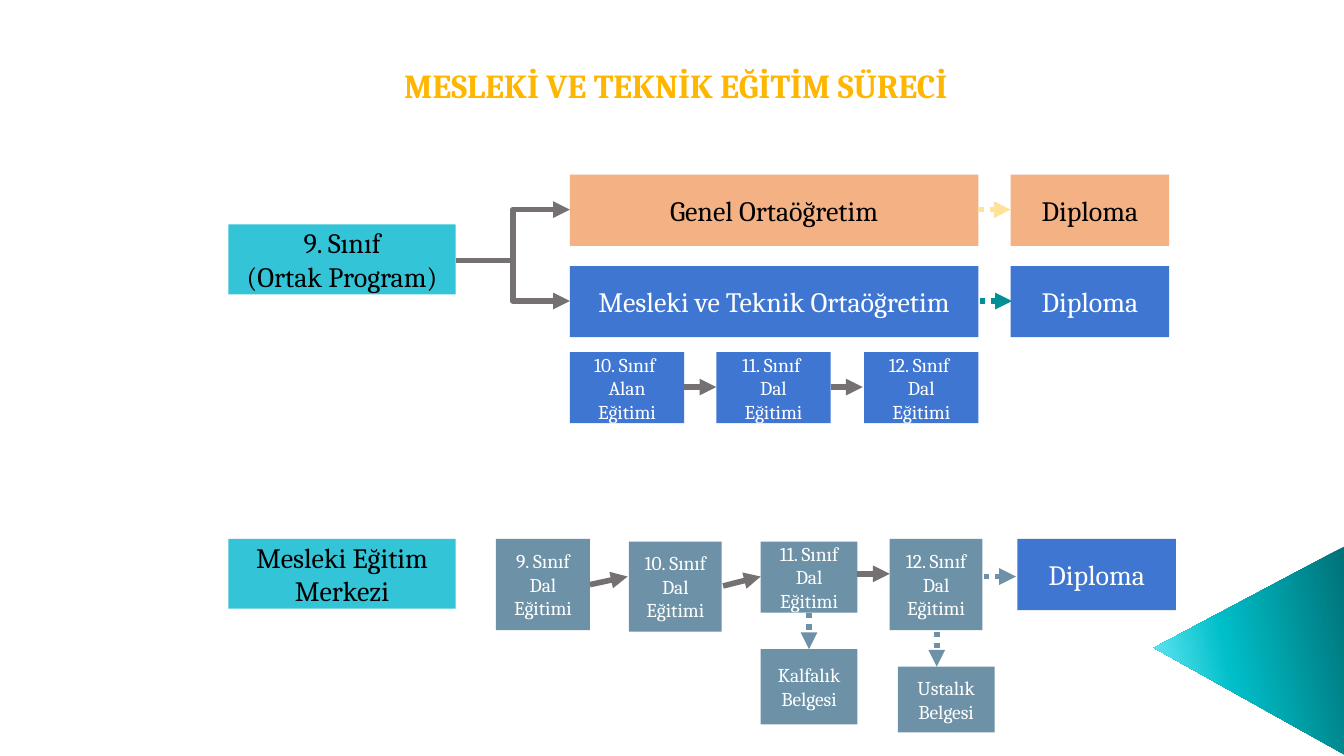
from copy import deepcopy

from pptx import Presentation
from pptx.dml.color import RGBColor
from pptx.enum.dml import MSO_LINE
from pptx.enum.shapes import MSO_CONNECTOR, MSO_SHAPE
from pptx.enum.text import MSO_ANCHOR, PP_ALIGN
from pptx.oxml.ns import qn
from pptx.util import Pt
from lxml import etree

RECT = MSO_SHAPE.RECTANGLE
TRI = MSO_SHAPE.ISOSCELES_TRIANGLE
LINE = MSO_CONNECTOR.STRAIGHT
ELBOW = MSO_CONNECTOR.ELBOW
DOTS = MSO_LINE.ROUND_DOT  # written as sysDot
MIDDLE = MSO_ANCHOR.MIDDLE
CENTER = PP_ALIGN.CENTER

PX = 9144  # 100 px to the inch
WIDE = 1000
FONT = "Cambria"
BIG, SMALL = 15, 10.5

BLACK = RGBColor(0x00, 0x00, 0x00)
WHITE = RGBColor(0xFF, 0xFF, 0xFF)
GOLD = RGBColor(0xFF, 0xB6, 0x00)
SAND = RGBColor(0xFF, 0xE2, 0x99)
PEACH = RGBColor(0xF4, 0xB1, 0x83)
BLUE = RGBColor(0x3E, 0x76, 0xD2)
CYAN = RGBColor(0x34, 0xC4, 0xD8)
STEEL = RGBColor(0x6D, 0x91, 0xA6)
GRAY = RGBColor(0x76, 0x71, 0x71)
TEAL = RGBColor(0x01, 0x8E, 0x95)
FADE = [
    (0, RGBColor(0x00, 0x71, 0x77)),
    (0.6, RGBColor(0x00, 0xBF, 0xC9)),
    (1, RGBColor(0x76, 0xEF, 0xFB)),
]


def emu(*sizes):
    return [size * PX for size in sizes]


def write(shape, text, size, color, bold=False):
    frame = shape.text_frame
    frame.word_wrap = True
    frame.vertical_anchor = MIDDLE
    frame.text = text
    for para in frame.paragraphs:
        para.alignment = CENTER
        para.font.name = FONT
        para.font.size = Pt(size)
        para.font.bold = bold
        para.font.color.rgb = color
    return frame


def add_box(slide, place, text, fill, size=BIG, color=WHITE):
    box = slide.shapes.add_shape(RECT, *emu(*place))
    box.shadow.inherit = False
    box.fill.solid()
    box.fill.fore_color.rgb = fill
    box.line.fill.background()
    write(box, text, size, color)


def add_arrow(slide, ends, color=GRAY, kind=LINE, dash=None):
    arrow = slide.shapes.add_connector(kind, *emu(*ends))
    arrow.line.color.rgb = color
    arrow.line.width = Pt(3)
    if dash:
        arrow.line.dash_style = dash
    props = arrow._element.spPr
    etree.SubElement(props.find(qn("a:ln")), qn("a:tailEnd"), type="triangle")
    etree.SubElement(props, qn("a:effectLst"))


def add_corner(slide):
    tri = slide.shapes.add_shape(TRI, *emu(852, 413, 155, 142))
    tri.adjustments[0] = 0.513
    tri.rotation = 270
    tri.shadow.inherit = False
    tri.line.fill.background()
    tri.fill.gradient()
    tri.fill.gradient_angle = 102
    stops = tri._element.spPr.find(".//" + qn("a:gsLst"))
    stops.append(deepcopy(stops[0]))
    for stop, (spot, color) in zip(tri.fill.gradient_stops, FADE):
        stop.position = spot
        stop.color.rgb = color


def add_title(slide):
    title = slide.shapes.add_textbox(*emu(207, 29, 592, 72))
    frame = write(title, "MESLEKİ VE TEKNİK EĞİTİM SÜRECİ", 18, GOLD, True)
    frame.paragraphs[0].line_spacing = 0.9


def add_school(slide):
    # Shared first year, forking into two tracks
    add_box(slide, (170, 167, 169, 52), "9. Sınıf\n(Ortak Program)", CYAN, color=BLACK)
    tracks = [
        (130, "Genel Ortaöğretim", PEACH, BLACK, SAND, 728),
        (198, "Mesleki ve Teknik Ortaöğretim", BLUE, WHITE, TEAL, 729),
    ]
    for top, text, fill, color, tint, left in tracks:
        mid = top + 26
        add_box(slide, (424, top, 304, 53), text, fill, color=color)
        add_box(slide, (752, top, 118, 53), "Diploma", fill, color=color)
        add_arrow(slide, (339, 194, 424, mid), kind=ELBOW)
        add_arrow(slide, (left, mid, left + 24, mid), tint, dash=DOTS)

    # Years of the vocational track
    years = [(424, "10. Sınıf \nAlan"), (533, "11. Sınıf \nDal"), (643, "12. Sınıf \nDal")]
    for left, text in years:
        add_box(slide, (left, 262, 85, 53), text + " Eğitimi", BLUE, SMALL)
    for left, _ in years[:-1]:
        add_arrow(slide, (left + 85, 288, left + 109, 288))


def add_center(slide):
    add_box(slide, (170, 401, 169, 52), "Mesleki Eğitim Merkezi", CYAN, color=BLACK)

    # Four years of training
    years = [(369, 401, 70, 68), (468, 403, 69, 67), (566, 403, 72, 53), (662, 401, 69, 68)]
    for grade, place in enumerate(years, 9):
        add_box(slide, place, f"{grade}. Sınıf\nDal Eğitimi", STEEL, SMALL)
    for ends in [(439, 435, 467, 429), (538, 436, 566, 429), (638, 427, 662, 427)]:
        add_arrow(slide, ends)

    # Certificates and diploma
    add_box(slide, (566, 483, 72, 56), "Kalfalık Belgesi", STEEL, SMALL)
    add_box(slide, (668, 496, 72, 49), "Ustalık Belgesi", STEEL, SMALL)
    add_box(slide, (757, 401, 118, 53), "Diploma", BLUE)
    for ends in [(602, 456, 602, 483), (697, 470, 697, 496), (732, 429, 756, 429)]:
        add_arrow(slide, ends, STEEL, dash=DOTS)


def main():
    # Widescreen page, 16:9
    deck = Presentation()
    deck.slide_width = WIDE * PX
    deck.slide_height = WIDE * PX * 9 // 16
    slide = deck.slides.add_slide(deck.slide_layouts[6])
    add_corner(slide)
    add_title(slide)
    add_school(slide)
    add_center(slide)
    deck.save("out.pptx")


if __name__ == "__main__":
    main()
